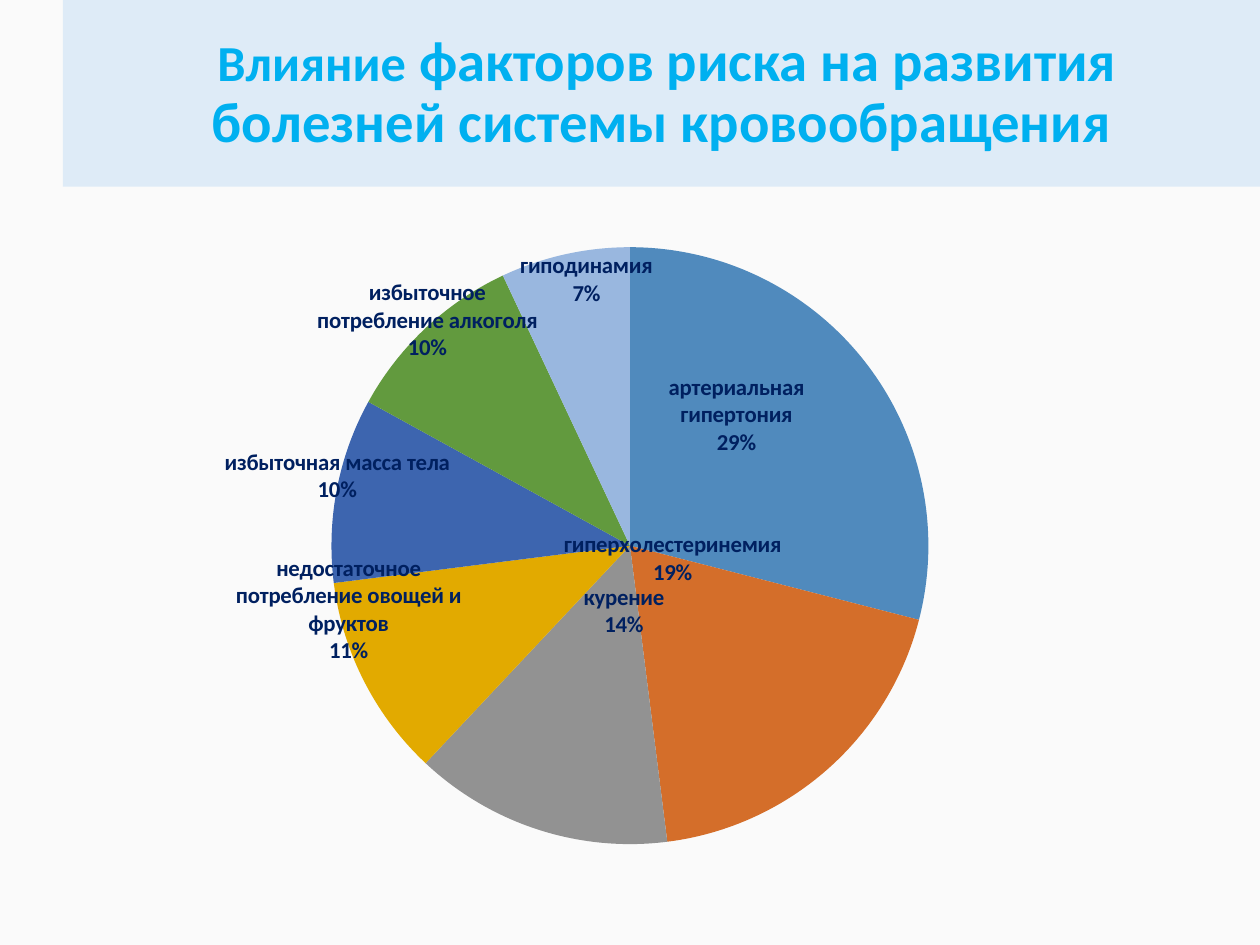
from math import cos, pi, sin

from pptx import Presentation
from pptx.chart.data import CategoryChartData
from pptx.dml.color import RGBColor
from pptx.enum.chart import XL_CHART_TYPE, XL_LABEL_POSITION
from pptx.enum.shapes import MSO_SHAPE
from pptx.enum.text import MSO_ANCHOR, PP_ALIGN
from pptx.oxml import parse_xml
from pptx.oxml.ns import nsdecls
from pptx.util import Pt

PIE = XL_CHART_TYPE.PIE
MID = XL_LABEL_POSITION.CENTER
RECT = MSO_SHAPE.RECTANGLE
MIDDLE = MSO_ANCHOR.MIDDLE
CENTER = PP_ALIGN.CENTER

FACTORS = [
    ("артериальная гипертония", 29, "508ABD", (421, 237.5)),
    ("гиперхолестеринемия", 19, "D46E2A", (384.5, 320)),
    ("курение", 14, "929292", (356.5, 350)),
    ("недостаточное потребление овощей и фруктов", 11, "E2AA00", (199, 349)),
    ("избыточная масса тела", 10, "3D65AF", (192.5, 272.5)),
    ("избыточное потребление алкоголя", 10, "629A3E", (244, 183.5)),
    ("гиподинамия", 7, "99B7DF", (335, 160)),
]
PLOT = {"x": 0.08, "y": 0.08, "w": 0.84, "h": 0.82}


def color(code):
    """Turn a hex string into a colour."""
    return RGBColor.from_string(code)


def layout(values, target=""):
    """Build a manual chart layout."""
    parts = "".join(f'<c:{key} val="{val}"/>' for key, val in values.items())
    return parse_xml(
        f'<c:layout {nsdecls("c")}><c:manualLayout>{target}{parts}'
        "</c:manualLayout></c:layout>"
    )


class Deck:
    """Hold the style and the current slide."""

    font = "Calibri"
    title = {"size": Pt(32.4), "bold": True, "color": "00B0F0"}
    label = {"size": Pt(13), "bold": True, "color": "002060"}

    def __init__(self, wide, high):
        """Open a deck of the given size."""
        self.prs = Presentation()
        self.prs.slide_width, self.prs.slide_height = Pt(wide), Pt(high)

    def page(self, back):
        """Add a blank slide with a plain background."""
        self.slide = self.prs.slides.add_slide(self.prs.slide_layouts[6])
        fill = self.slide.background.fill
        fill.solid()
        fill.fore_color.rgb = color(back)

    def style(self, font, look):
        """Apply a dict of format values to a font."""
        font.name = self.font
        for key, val in look.items():
            if key == "color":
                font.color.rgb = color(val)
            else:
                setattr(font, key, val)

    def banner(self, box, fill, runs):
        """Add a filled title band made of sized runs."""
        band = self.slide.shapes.add_shape(RECT, *map(Pt, box))
        band.shadow.inherit = False
        band.fill.solid()
        band.fill.fore_color.rgb = color(fill)
        band.line.fill.background()
        frame = band.text_frame
        frame.word_wrap, frame.vertical_anchor = True, MIDDLE
        para = frame.paragraphs[0]
        para.alignment, para.line_spacing = CENTER, 0.9
        for text, size in runs:
            if text == "\n":
                para.add_line_break()
                continue
            run = para.add_run()
            run.text = text
            self.style(run.font, {**self.title, "size": Pt(size)})

    def pie(self, box, rows, hub, reach):
        """Add a pie whose labels are centred on given spots."""
        data = CategoryChartData()
        data.categories = [row[0] for row in rows]
        data.add_series("Series 1", [row[1] for row in rows])
        chart = self.slide.shapes.add_chart(PIE, *map(Pt, box), data).chart
        chart.has_legend = chart.has_title = False
        self.style(chart.font, {"size": Pt(10), "color": "000000"})
        plot = chart.plots[0]
        plot.vary_by_categories = True
        area = chart.element.find(".//{*}plotArea")
        for old in area.findall("{*}layout"):
            area.remove(old)
        modes = {"xMode": "edge", "yMode": "edge"}
        inner = '<c:layoutTarget val="inner"/>'
        area.insert(0, layout({**modes, **PLOT}, inner))

        series, total, done = plot.series[0], sum(row[1] for row in rows), 0
        for num, (_, share, fill, spot) in enumerate(rows):
            point = series.points[num]
            point.format.fill.solid()
            point.format.fill.fore_color.rgb = color(fill)
            point.format.line.fill.background()
            point.data_label.position = MID
            self.style(point.data_label.font, self.label)
            turn = 2 * pi * (done + share / 2) / total
            done += share
            base = (hub[0] + reach * sin(turn), hub[1] - reach * cos(turn))
            shift = [round((to - at) / size, 4)
                     for to, at, size in zip(spot, base, box[2:])]
            tag = series.data_labels._element.findall("{*}dLbl")[num]
            for old in tag.findall("{*}layout"):
                tag.remove(old)
            tag.insert(1, layout(dict(zip("xy", shift))))
            for name, val in (("Val", 0), ("CatName", 1), ("Percent", 1)):
                tag.find("{*}show" + name).set("val", str(val))
        labels = series.data_labels
        labels.show_value = False
        labels.show_category_name = labels.show_percentage = True
        labels.number_format, labels.number_format_is_linked = "0%", False
        self.style(labels.font, self.label)


def main():
    """Build the slide and save it."""
    deck = Deck(720, 540)
    deck.page("FAFAFA")
    deck.banner((36, 0, 684, 106.6), "DEEBF7", [
        (" Влияние", 28.8),
        (" факторов риска на развития", 32.4),
        ("\n", 0),
        ("болезней системы кровообращения", 32.4),
    ])
    deck.pie((0, 108, 720, 416), FACTORS, (360, 312), 85.5)
    deck.prs.save("out.pptx")


if __name__ == "__main__":
    main()
